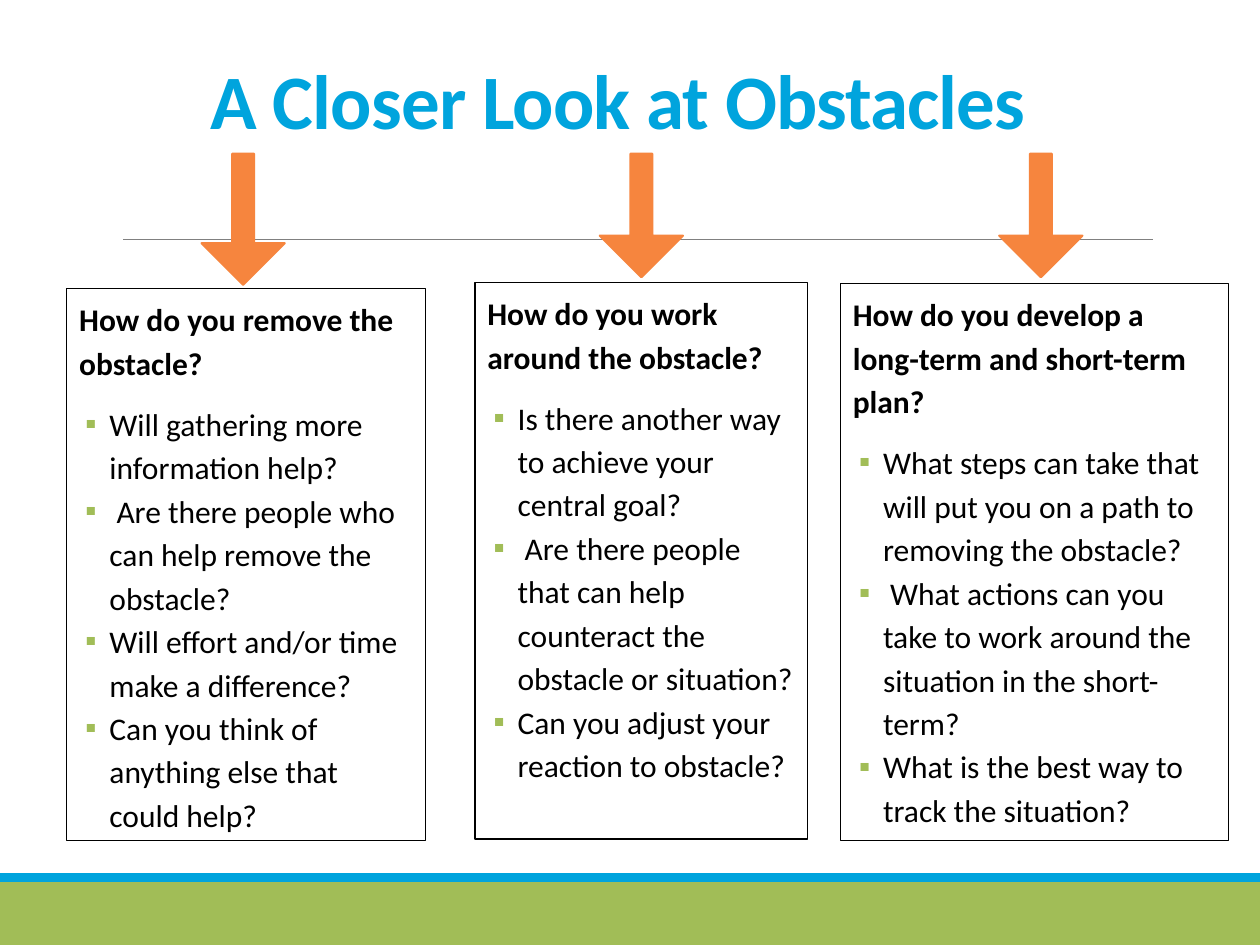
from lxml.etree import SubElement
from pptx import Presentation
from pptx.dml.color import RGBColor
from pptx.enum.shapes import MSO_CONNECTOR, MSO_SHAPE
from pptx.enum.text import MSO_ANCHOR, MSO_AUTO_SIZE, PP_ALIGN
from pptx.oxml.ns import qn
from pptx.util import Inches, Pt

BLUE = RGBColor(0x00, 0xA4, 0xDD)
GREEN = RGBColor(0xA1, 0xBD, 0x57)
ORANGE = RGBColor(0xF6, 0x85, 0x3E)
GRAY = RGBColor(0x80, 0x80, 0x80)
BLACK = RGBColor(0, 0, 0)
WHITE = RGBColor(0xFF, 0xFF, 0xFF)

# Box (left, top, width, height), arrow (centre x, top, length), question, prompts
COLUMNS = [
    ((0.53, 2.29, 2.85, 4.38), (1.93, 1.22, 1.04),
     "How do you remove the obstacle?",
     ["Will gathering more information help?",
      " Are there people who can help remove the obstacle?",
      "Will effort and/or time make a difference?",
      "Can you think of anything else that could help?"]),
    ((3.77, 2.24, 2.64, 4.42), (5.09, 1.22, 0.98),
     "How do you work around the obstacle?",
     ["Is there another way to achieve your central goal?",
      " Are there people that can help counteract the obstacle or situation?",
      "Can you adjust your reaction to obstacle?"]),
    ((6.67, 2.25, 3.08, 4.42), (8.26, 1.22, 0.98),
     "How do you develop a long-term and short-term plan?",
     ["What steps can take that will put you on a path to removing the obstacle?",
      " What actions can you take to work around the situation in the short-term?",
      "What is the best way to track the situation?"]),
]


class SlideBuilder:
    font = "Calibri"
    body_size = 18
    arrow_width = 0.66

    def __init__(self, slide):
        self.slide = slide

    def add_run(self, p, text, size, color, bold=False):
        r = p.add_run()
        r.text = text
        r.font.name = self.font
        r.font.size = Pt(size)
        r.font.bold = bold
        r.font.color.rgb = color
        return r

    def title(self, text, left, top, width, height):
        sp = self.slide.shapes.title
        sp.left, sp.top = Inches(left), Inches(top)
        sp.width, sp.height = Inches(width), Inches(height)
        tf = sp.text_frame
        tf.auto_size = MSO_AUTO_SIZE.NONE
        tf.vertical_anchor = MSO_ANCHOR.BOTTOM
        p = tf.paragraphs[0]
        p.alignment = PP_ALIGN.CENTER
        p.line_spacing = 0.85
        r = self.add_run(p, text, 44, BLUE, bold=True)
        r.font._element.set("spc", "-50")

    def shape(self, kind, left, top, width, height, fill, line=None, weight=0.75):
        sp = self.slide.shapes.add_shape(
            kind, Inches(left), Inches(top), Inches(width), Inches(height))
        sp.shadow.inherit = False
        sp.fill.solid()
        sp.fill.fore_color.rgb = fill
        if line is None:
            sp.line.fill.background()
        else:
            sp.line.color.rgb = line
            sp.line.width = Pt(weight)
        return sp

    def rule(self, x1, x2, y):
        line = self.slide.shapes.add_connector(
            MSO_CONNECTOR.STRAIGHT, Inches(x1), Inches(y), Inches(x2), Inches(y))
        line.line.color.rgb = GRAY
        line.line.width = Pt(0.5)
        SubElement(line._element.spPr, qn("a:effectLst"))

    def down_arrow(self, center, top, length):
        """Draw a right arrow turned a quarter, so its tip points down."""
        width = self.arrow_width
        sp = self.shape(MSO_SHAPE.RIGHT_ARROW, center - length / 2,
                        top + (length - width) / 2, length, width,
                        ORANGE, ORANGE, 1.25)
        sp.rotation = 90
        sp.adjustments[0] = 0.262
        sp.adjustments[1] = 0.5

    def bullet(self, p):
        pPr = p._p.get_or_add_pPr()
        pPr.set("marL", str(Inches(0.24)))
        pPr.set("indent", str(Inches(-0.19)))
        color = SubElement(pPr, qn("a:buClr"))
        SubElement(color, qn("a:srgbClr"), val=str(GREEN))
        SubElement(pPr, qn("a:buFont"), typeface=self.font)
        SubElement(pPr, qn("a:buChar"), char="▪")

    def question_box(self, box, question, prompts):
        tf = self.shape(MSO_SHAPE.RECTANGLE, *box, WHITE, BLACK).text_frame
        tf.word_wrap = True
        tf.vertical_anchor = MSO_ANCHOR.TOP
        for i, text in enumerate([question, *prompts]):
            is_question = i == 0
            p = tf.paragraphs[0] if is_question else tf.add_paragraph()
            p.alignment = PP_ALIGN.LEFT
            p.line_spacing = 1.15
            p.space_after = Pt(10 if i in (0, len(prompts)) else 0)
            if not is_question:
                self.bullet(p)
            self.add_run(p, text, self.body_size, BLACK, bold=is_question)


def main():
    prs = Presentation()
    prs.slide_width, prs.slide_height = Inches(10), Inches(7.5)
    builder = SlideBuilder(prs.slides.add_slide(prs.slide_layouts[5]))

    builder.shape(MSO_SHAPE.RECTANGLE, 0, 7, 10, 0.5, GREEN)
    builder.shape(MSO_SHAPE.RECTANGLE, 0, 6.93, 10, 0.07, BLUE)
    builder.rule(0.98, 9.15, 1.9)
    builder.title("A Closer Look at Obstacles", 0.53, -0.05, 8.75, 1.25)
    for box, arrow, question, prompts in COLUMNS:
        builder.down_arrow(*arrow)
        builder.question_box(box, question, prompts)

    prs.save("out.pptx")


if __name__ == "__main__":
    main()
